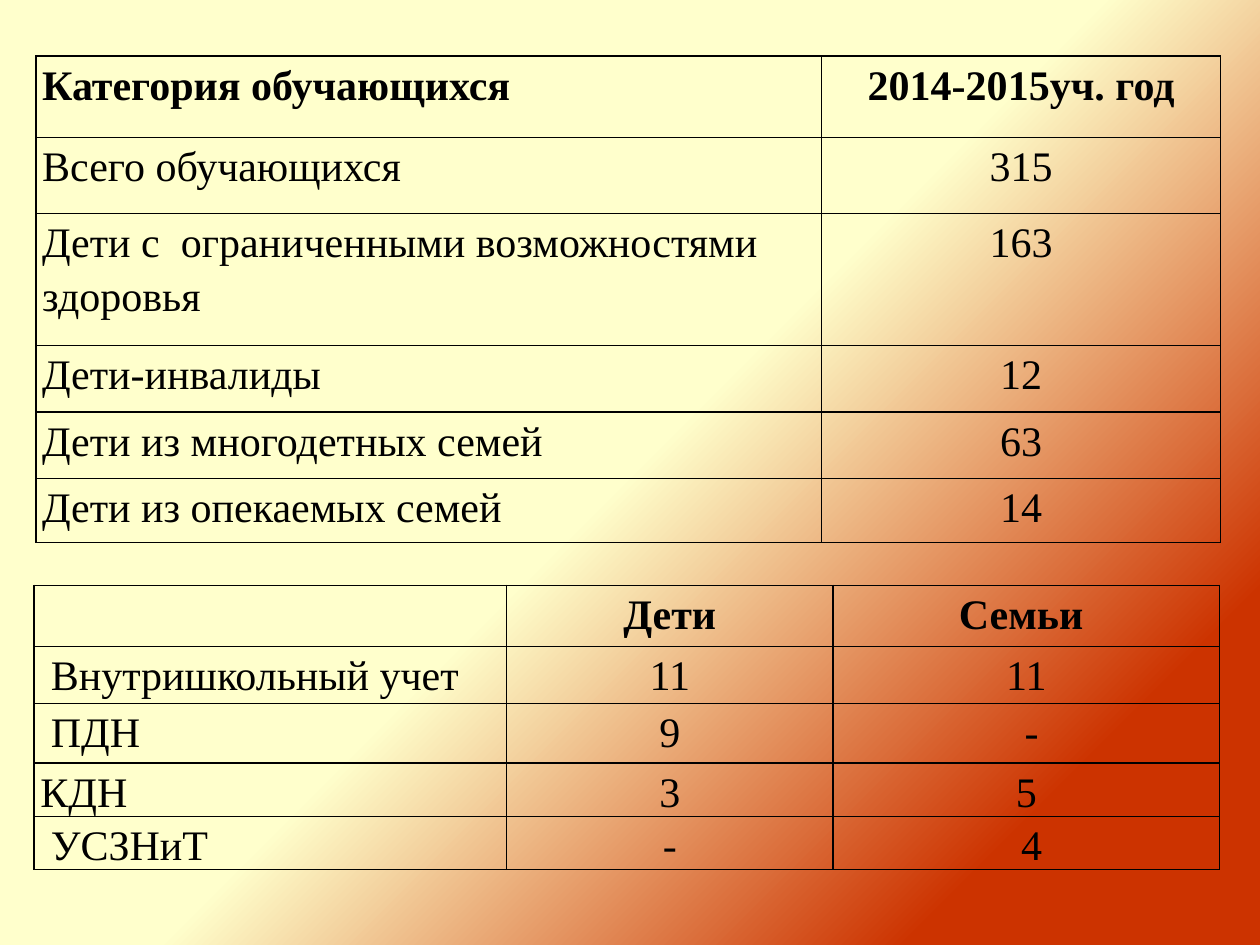
from lxml.etree import SubElement
from pptx import Presentation
from pptx.dml.color import RGBColor
from pptx.enum.text import PP_ALIGN as Align
from pptx.oxml.ns import qn
from pptx.util import Pt


def color(value):
    return RGBColor.from_string(value)


class SlideBuilder:
    font_name = "Times New Roman"
    font_size = 24
    ink = "000000"
    border_width = 1
    side_margin = 3.6
    line_spacing = 1.15

    def __init__(self, slide):
        self.slide = slide

    def background(self, stops, angle):
        fill = self.slide.background.fill
        fill.gradient()
        fill.gradient_angle = 360 - angle
        for stop, (position, value) in zip(fill.gradient_stops, stops):
            stop.position = position
            stop.color.rgb = color(value)

    def table(self, left, top, widths, heights, rows):
        shape = self.slide.shapes.add_table(
            len(rows), len(widths), Pt(left), Pt(top),
            Pt(sum(widths)), Pt(sum(heights)))
        table = shape.table
        table.first_row = table.horz_banding = False
        for column, width in zip(table.columns, widths):
            column.width = Pt(width)
        for row, height in zip(table.rows, heights):
            row.height = Pt(height)
        for i, texts in enumerate(rows):
            for j, text in enumerate(texts):
                self.cell(table.cell(i, j), text, bold=i == 0, centered=j > 0)

    def cell(self, cell, text, bold, centered):
        cell.margin_left = cell.margin_right = Pt(self.side_margin)
        cell.margin_top = cell.margin_bottom = 0
        self.borders(cell)
        cell.fill.background()
        if not text:
            return
        cell.text = text
        paragraph = cell.text_frame.paragraphs[0]
        paragraph.alignment = Align.CENTER if centered else Align.LEFT
        paragraph.line_spacing = self.line_spacing
        font = paragraph.font
        font.name = self.font_name
        font.size = Pt(self.font_size)
        font.bold = bold
        font.color.rgb = color(self.ink)

    def borders(self, cell):
        properties = cell._tc.get_or_add_tcPr()
        for side in ("a:lnL", "a:lnR", "a:lnT", "a:lnB"):
            line = SubElement(properties, qn(side), w=str(Pt(self.border_width)))
            fill = SubElement(line, qn("a:solidFill"))
            SubElement(fill, qn("a:srgbClr"), val=self.ink)


def main():
    presentation = Presentation()
    presentation.slide_width, presentation.slide_height = Pt(720), Pt(540)
    slide = presentation.slides.add_slide(presentation.slide_layouts[6])
    builder = SlideBuilder(slide)
    builder.background([(0.5, "FFFFCC"), (0.84, "CC3300")], angle=45)

    # Pupils by category
    builder.table(20.5, 32, [449, 228], [46.5, 43.5, 75.5, 38, 38, 36.5], [
        ("Категория обучающихся", "2014-2015уч. год"),
        ("Всего обучающихся", "315"),
        ("Дети с  ограниченными возможностями здоровья", "163"),
        ("Дети-инвалиды", "12"),
        ("Дети из многодетных семей", "63"),
        ("Дети из опекаемых семей", "14"),
    ])

    # Children and families on record
    builder.table(19.5, 334.5, [270, 186.5, 221], [35, 32.5, 34, 30.5, 30.5], [
        ("", "Дети", "Семьи "),
        (" Внутришкольный учет", "11", "11"),
        (" ПДН", "9", " -"),
        ("КДН", "3", "5"),
        (" УСЗНиТ", "-", " 4"),
    ])

    presentation.save("out.pptx")


if __name__ == "__main__":
    main()
